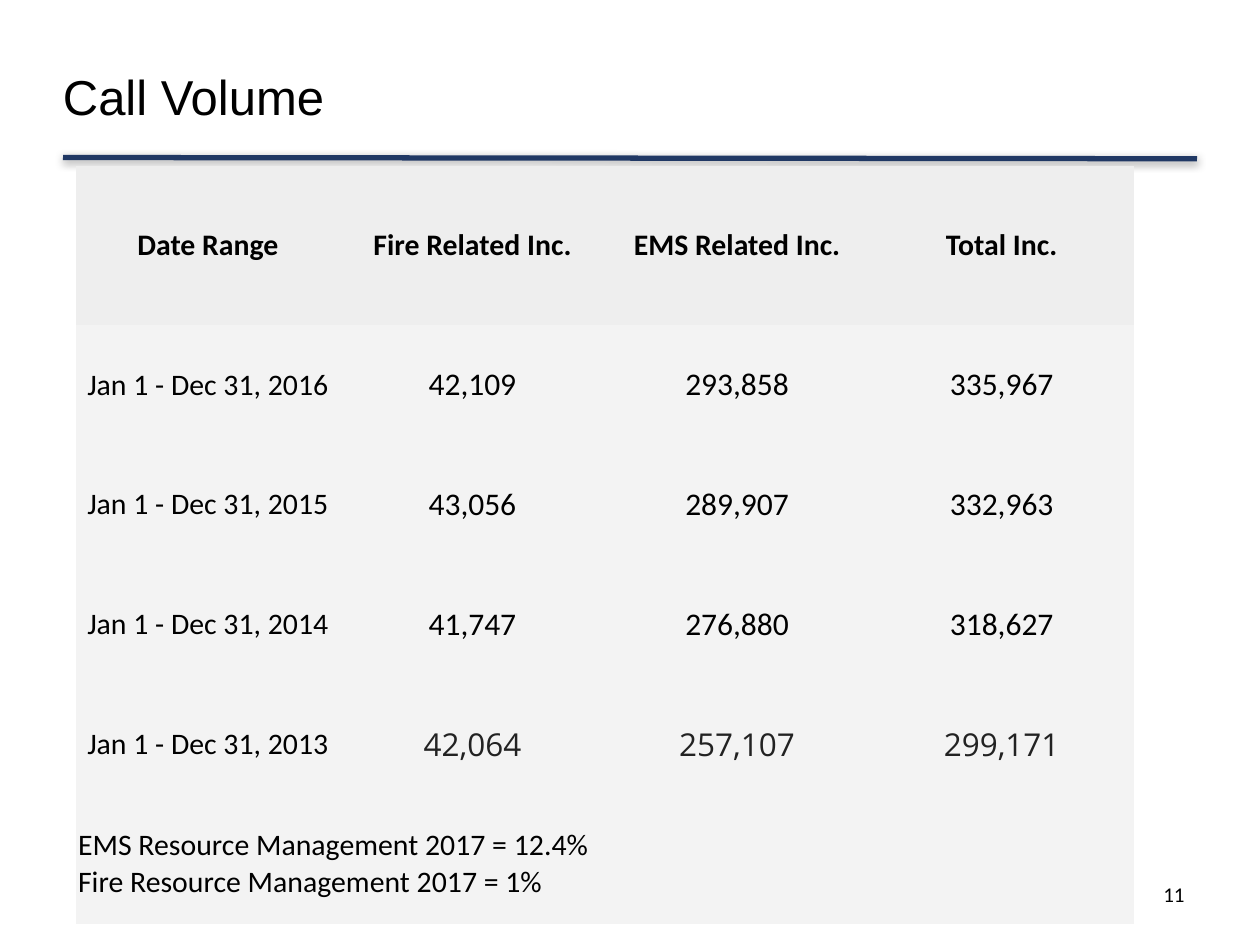
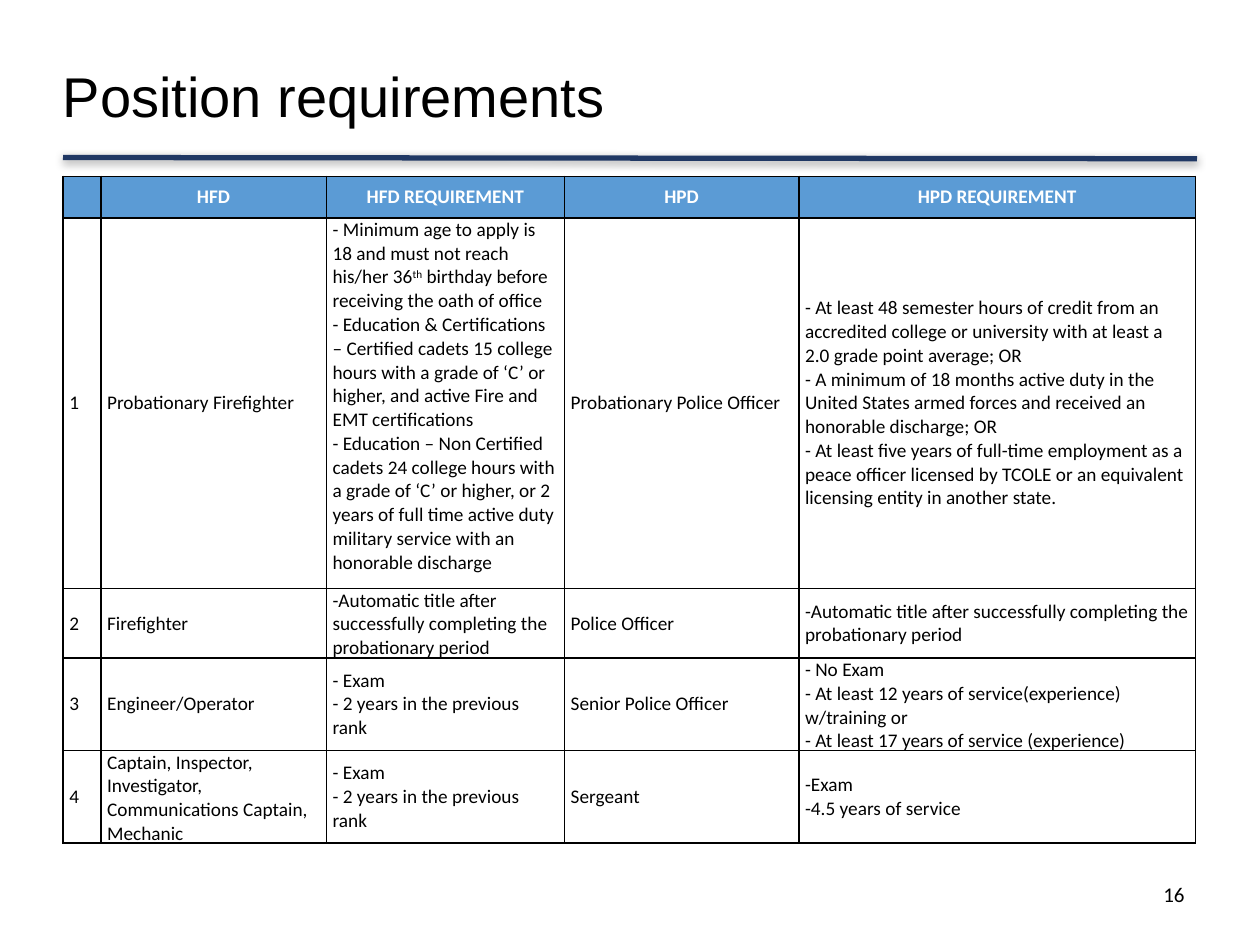
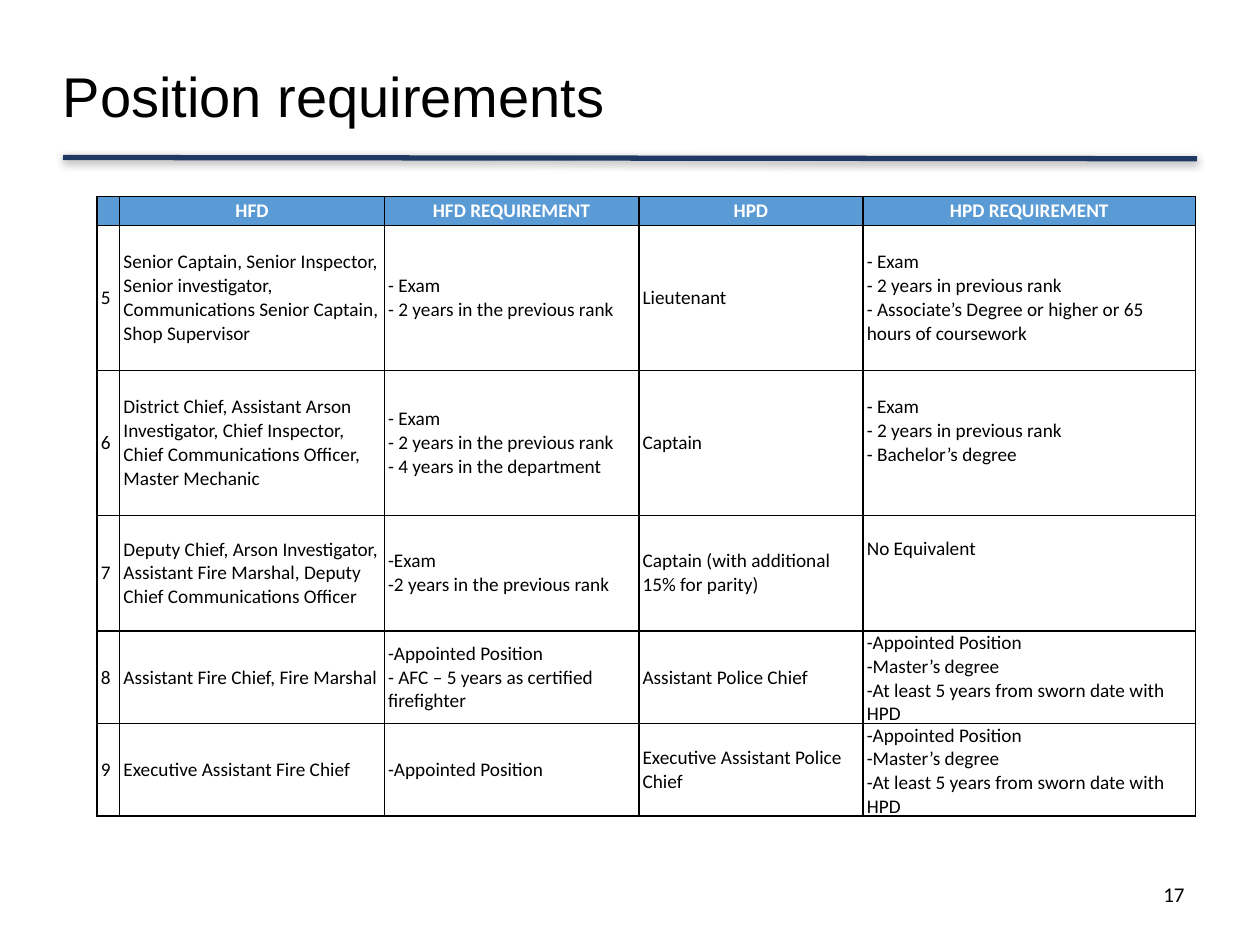
from dataclasses import dataclass, field
from typing import Callable

from lxml import etree
from pptx import Presentation
from pptx import util as u
from pptx.dml.color import RGBColor
from pptx.enum import shapes, text
from pptx.oxml.ns import qn

COLORS = {
    "ink": "000000",
    "soft_ink": "222222",
    "white": "FFFFFF",
    "rule": "203864",
    "header_blue": "5B9BD5",
    "header_gray": "EEEEEE",
    "body_gray": "F3F3F3",
}
TITLE_FONT, BODY_FONT, FIGURE_FONT = "Arial", "Calibri", "Open Sans"
LEFT, CENTER, RIGHT = text.PP_ALIGN.LEFT, text.PP_ALIGN.CENTER, text.PP_ALIGN.RIGHT
LINE_HEIGHT = 0.19  # one line of 11 pt body text, in inches


@dataclass(frozen=True)
class TextStyle:
    size: float
    font: str = BODY_FONT
    color: str = "ink"
    bold: bool = False
    align: text.PP_ALIGN = LEFT


@dataclass(frozen=True)
class CellStyle:
    text: TextStyle
    fill: str | None = None


@dataclass(frozen=True)
class Grid:
    left: float
    top: float
    columns: list[float]
    heights: list[float]
    rows: list[list[str]]
    style: Callable[[int, int], CellStyle]
    side_margin: float
    end_margin: float = 0
    bordered: bool = True
    merged_rows: tuple[int, ...] = ()
    lines_below: dict[tuple[int, int], int] = field(default_factory=dict)


@dataclass(frozen=True)
class Page:
    title: str
    title_size: float
    number: int
    grid: Grid


def rgb(name: str) -> RGBColor:
    return RGBColor.from_string(COLORS[name])


def write(frame, content: str, style: TextStyle, spacing: float | None = None) -> None:
    """Put one paragraph per line; text between carets is superscript."""
    for index, line in enumerate(content.split("\n")):
        paragraph = frame.paragraphs[0] if index == 0 else frame.add_paragraph()
        paragraph.alignment = style.align
        if spacing:
            paragraph.line_spacing = spacing
        if not line:
            end = etree.SubElement(paragraph._p, qn("a:endParaRPr"))
            end.set("sz", str(int(style.size * 100)))
        for part, piece in enumerate(line.split("^") if line else []):
            run = paragraph.add_run()
            run.text = piece
            run.font.name, run.font.size = style.font, u.Pt(style.size)
            run.font.bold = style.bold
            run.font.color.rgb = rgb(style.color)
            if part % 2:
                run._r.get_or_add_rPr().set("baseline", "30000")


def add_label(slide, box: tuple[float, float, float, float], content: str,
              style: TextStyle):
    label = slide.shapes.add_textbox(*map(u.Inches, box))
    label.text_frame.word_wrap = True
    write(label.text_frame, content, style)
    return label.text_frame


def add_title(slide, title: str, size: float) -> None:
    frame = add_label(slide, (0.5, 0.33, 6.86, 0.92), title, TextStyle(size, TITLE_FONT))
    frame.paragraphs[0].line_spacing = 0.9
    frame.vertical_anchor = text.MSO_ANCHOR.MIDDLE
    frame.margin_left = frame.margin_right = frame.margin_top = frame.margin_bottom = 0


def add_title_rule(slide) -> None:
    rule = slide.shapes.add_connector(
        shapes.MSO_CONNECTOR.STRAIGHT,
        u.Inches(0.5), u.Inches(1.25), u.Inches(9.5), u.Inches(1.26))
    rule.line.color.rgb = rgb("rule")
    rule.line.width = u.Pt(3)
    effects = etree.SubElement(rule._element.spPr, qn("a:effectLst"))
    shadow = etree.SubElement(
        effects, qn("a:outerShdw"), blurRad=str(u.Pt(5)), dist=str(u.Pt(1.6)),
        dir="5400000", algn="t", rotWithShape="0")
    tint = etree.SubElement(shadow, qn("a:srgbClr"), val=COLORS["ink"])
    etree.SubElement(tint, qn("a:alpha"), val="38000")


def set_borders(cell, visible: bool) -> None:
    properties = cell._tc.get_or_add_tcPr()
    for position, side in enumerate(("lnL", "lnR", "lnT", "lnB")):
        border = etree.Element(qn(f"a:{side}"), w=str(u.Pt(1)))
        if visible:
            solid = etree.SubElement(border, qn("a:solidFill"))
            etree.SubElement(solid, qn("a:srgbClr"), val=COLORS["ink"])
        else:
            etree.SubElement(border, qn("a:noFill"))
        properties.insert(position, border)


def format_cell(cell, style: CellStyle, grid: Grid, lines_below: int) -> None:
    cell.vertical_anchor = text.MSO_ANCHOR.MIDDLE
    cell.margin_left = cell.margin_right = u.Inches(grid.side_margin)
    cell.margin_top = u.Inches(grid.end_margin)
    cell.margin_bottom = u.Inches(grid.end_margin + lines_below * LINE_HEIGHT)
    if style.fill:
        cell.fill.solid()
        cell.fill.fore_color.rgb = rgb(style.fill)
    else:
        cell.fill.background()
    set_borders(cell, grid.bordered)


def add_grid(slide, grid: Grid) -> None:
    table = slide.shapes.add_table(
        len(grid.rows), len(grid.columns), u.Inches(grid.left), u.Inches(grid.top),
        u.Inches(sum(grid.columns)), u.Inches(sum(grid.heights))).table
    table.first_row = table.horz_banding = False
    for column, width in zip(table.columns, grid.columns):
        column.width = u.Inches(width)
    for row, height in zip(table.rows, grid.heights):
        row.height = u.Inches(height)
    for r in grid.merged_rows:
        table.cell(r, 0).merge(table.cell(r, len(grid.columns) - 1))
    for r, entries in enumerate(grid.rows):
        for c in range(len(grid.columns)):
            cell, style = table.cell(r, c), grid.style(r, c)
            format_cell(cell, style, grid, grid.lines_below.get((r, c), 0))
            if c < len(entries):
                write(cell.text_frame, entries[c], style.text)


def call_style(row: int, column: int) -> CellStyle:
    if row == 0:
        return CellStyle(TextStyle(17, bold=True, align=CENTER), "header_gray")
    if row == 5:
        words = TextStyle(17)
    elif column == 0:
        words = TextStyle(17, align=CENTER)
    elif row == 4:
        words = TextStyle(18, FIGURE_FONT, "soft_ink", align=CENTER)
    else:
        words = TextStyle(18, align=CENTER)
    return CellStyle(words, "body_gray")


def position_style(row: int, column: int) -> CellStyle:
    if row == 0:
        return CellStyle(TextStyle(11, color="white", bold=True, align=CENTER),
                         "header_blue")
    return CellStyle(TextStyle(11))


POSITION_HEADER = ["", "HFD", "HFD REQUIREMENT", "HPD", "HPD REQUIREMENT"]
AUTOMATIC = "-Automatic title after successfully completing the probationary period"
EXAM_AND_RANK = "- Exam\n- 2 years in the previous rank"
POLICE_EXAM = "- Exam\n- 2 years in previous rank"
POLICE_CHIEF = ("-Appointed Position\n-Master’s degree\n"
                "-At least 5 years from sworn date with HPD")

CALLS = Grid(
    0.6, 1.32, [2.1] * 4, [1.26] + [0.95] * 5,
    [
        ["Date Range", "Fire Related Inc.", "EMS Related Inc.", "Total Inc."],
        ["Jan 1 - Dec 31, 2016", "42,109", "293,858", "335,967"],
        ["Jan 1 - Dec 31, 2015", "43,056", "289,907", "332,963"],
        ["Jan 1 - Dec 31, 2014", "41,747", "276,880", "318,627"],
        ["Jan 1 - Dec 31, 2013", "42,064", "257,107", "299,171"],
        ["EMS Resource Management 2017 = 12.4%\nFire Resource Management 2017 = 1%"],
    ],
    call_style, side_margin=0.02, end_margin=0.02, bordered=False, merged_rows=(5,))

ENTRY_POSITIONS = Grid(
    0.5, 1.4, [0.3, 1.79, 1.89, 1.86, 3.15], [0.33, 2.51, 0.5, 0.66, 0.66],
    [
        POSITION_HEADER,
        ["1", "Probationary Firefighter",
         "- Minimum age to apply is 18 and must not reach his/her 36^th^ birthday before "
         "receiving the oath of office\n"
         "- Education & Certifications – Certified cadets 15 college hours with a grade "
         "of ‘C’ or higher, and active Fire and EMT certifications\n"
         "- Education – Non Certified cadets 24 college hours with a grade of ‘C’ or "
         "higher, or 2 years of full time active duty military service with an "
         "honorable discharge",
         "Probationary Police Officer",
         "- At least 48 semester hours of credit from an accredited college or "
         "university with at least a 2.0 grade point average; OR\n"
         "- A minimum of 18 months active duty in the United States armed forces and "
         "received an honorable discharge; OR\n"
         "- At least five years of full-time employment as a peace officer licensed by "
         "TCOLE or an equivalent licensing entity in another state."],
        ["2", "Firefighter", AUTOMATIC, "Police Officer", AUTOMATIC],
        ["3", "Engineer/Operator", EXAM_AND_RANK, "Senior Police Officer",
         "- No Exam\n- At least 12 years of service(experience) w/training or\n"
         "- At least 17 years of service (experience)"],
        ["4", "Captain, Inspector, Investigator, Communications Captain, Mechanic",
         EXAM_AND_RANK, "Sergeant", "-Exam\n-4.5 years of service"],
    ],
    position_style, side_margin=0.05, lines_below={(1, 2): 1})

SENIOR_POSITIONS = Grid(
    0.77, 1.56, [0.18, 2.1, 2.02, 1.78, 2.64], [0.23, 1.15, 1.15, 0.92, 0.69, 0.69],
    [
        POSITION_HEADER,
        ["5", "Senior Captain, Senior Inspector, Senior investigator, Communications "
              "Senior Captain, Shop Supervisor",
         EXAM_AND_RANK, "Lieutenant",
         POLICE_EXAM + "\n- Associate’s Degree or higher or 65 hours of coursework"],
        ["6", "District Chief, Assistant Arson Investigator, Chief Inspector, Chief "
              "Communications Officer, Master Mechanic",
         EXAM_AND_RANK + "\n- 4 years in the department", "Captain",
         POLICE_EXAM + "\n- Bachelor’s degree"],
        ["7", "Deputy Chief, Arson Investigator, Assistant Fire Marshal, Deputy Chief "
              "Communications Officer",
         "-Exam\n-2 years in the previous rank",
         "Captain (with additional 15% for parity)", "No Equivalent"],
        ["8", "Assistant Fire Chief, Fire Marshal",
         "-Appointed Position\n- AFC – 5 years as certified firefighter",
         "Assistant Police Chief", POLICE_CHIEF],
        ["9", "Executive Assistant Fire Chief", "-Appointed Position",
         "Executive Assistant Police Chief", POLICE_CHIEF],
    ],
    position_style, side_margin=0.03, lines_below={(2, 4): 1, (3, 4): 2})

PAGES = [
    Page("Call Volume", 28, 11, CALLS),
    Page("Position requirements", 32, 16, ENTRY_POSITIONS),
    Page("Position requirements", 32, 17, SENIOR_POSITIONS),
]


def main() -> None:
    deck = Presentation()
    deck.slide_width, deck.slide_height = u.Inches(10), u.Inches(7.5)
    for page in PAGES:
        slide = deck.slides.add_slide(deck.slide_layouts[6])
        add_title_rule(slide)
        add_title(slide, page.title, page.title_size)
        add_label(slide, (7.17, 6.95, 2.33, 0.4), str(page.number),
                  TextStyle(12, align=RIGHT))
        add_grid(slide, page.grid)
    deck.save("out.pptx")


if __name__ == "__main__":
    main()
